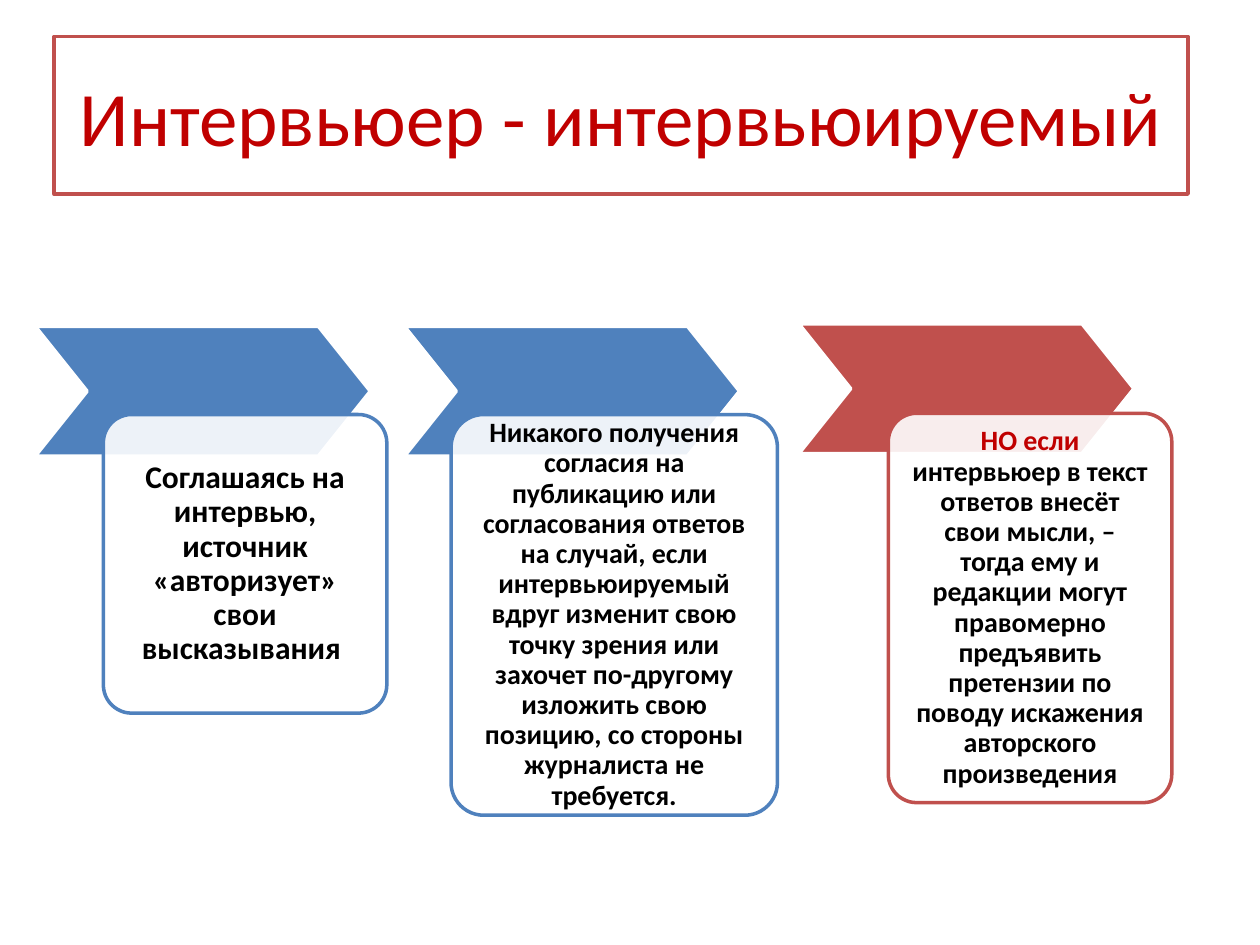
from dataclasses import dataclass

from lxml import etree
from pptx import Presentation, util as u
from pptx.dml.color import RGBColor
from pptx.enum import shapes, text
from pptx.oxml.ns import qn

PX = u.Inches(1) // 100


@dataclass(frozen=True)
class Theme:
    font: str = "Calibri"
    white: str = "FFFFFF"
    black: str = "000000"
    blue: str = "4F81BD"
    red: str = "C0504D"
    dark: str = "C00000"
    title: int = 44
    large: int = 18
    small: int = 16
    line: int = 2
    alpha: int = 90


T = Theme()
KIND = shapes.MSO_SHAPE


def shape(slide, kind, box, fill, line, adj=None):
    item = slide.shapes.add_shape(kind, *(n * PX for n in box))
    item.shadow.inherit = False
    item.fill.solid()
    item.fill.fore_color.rgb = RGBColor.from_string(fill)
    item.line.color.rgb = RGBColor.from_string(line)
    item.line.width = u.Pt(T.line)
    if adj is not None:
        item.adjustments[0] = adj
    return item


def fade(item):
    color = item.fill._xPr.find(qn("a:solidFill"))[0]
    etree.SubElement(color, qn("a:alpha")).set("val", str(T.alpha * 1000))


def write(item, parts, size, bold=False):
    frame = item.text_frame
    frame.word_wrap = True
    frame.vertical_anchor = text.MSO_ANCHOR.MIDDLE
    para = frame.paragraphs[0]
    para.alignment = text.PP_ALIGN.CENTER
    for words, color in parts:
        run = para.add_run()
        run.text = words
        run.font.name = T.font
        run.font.size = u.Pt(size)
        run.font.bold = bold
        run.font.color.rgb = RGBColor.from_string(color)
    return frame


def header(slide, box, words):
    item = shape(slide, KIND.RECTANGLE, box, T.white, T.red)
    write(item, [(words, T.dark)], T.title)


def step(slide, box, card, color, parts, size, inset):
    left, top = box
    shape(slide, KIND.CHEVRON, (left, top, 266, 103), color, T.white, 0.4)
    right, down, width, height = card
    item = shape(slide, KIND.ROUNDED_RECTANGLE,
                 (left + right, top + down, width, height),
                 T.white, color, 0.1)
    fade(item)
    frame = write(item, parts, size, True)
    frame.margin_left = frame.margin_right = inset * PX
    frame.margin_top = frame.margin_bottom = inset * PX
    frame.paragraphs[0].line_spacing = 0.9


STEPS = [
    ((28, 259), (54, 70, 225, 237), T.blue,
     [("Соглашаясь на интервью, источник «авторизует» свои высказывания ",
       T.black)], T.large, 14),
    ((321, 259), (37, 70, 259, 318), T.blue,
     [("Никакого получения согласия на публикацию или согласования ответов "
       "на случай, если интервьюируемый вдруг изменит свою точку зрения или "
       "захочет по-другому изложить свою позицию, со стороны журналиста не "
       "требуется.", T.black)], T.small, 12),
    ((634, 257), (71, 71, 225, 309), T.red,
     [("НО если ", T.dark),
      ("интервьюер в текст ответов внесёт свои мысли, – тогда ему и редакции "
       "могут правомерно предъявить претензии по поводу искажения авторского "
       "произведения", T.black)], T.small, 12),
]


def main():
    deck = Presentation()
    deck.slide_width = 1000 * PX
    deck.slide_height = 750 * PX
    slide = deck.slides.add_slide(deck.slide_layouts[6])
    header(slide, (43, 29, 900, 125), "Интервьюер - интервьюируемый")
    for item in STEPS:
        step(slide, *item)
    deck.save("out.pptx")


if __name__ == "__main__":
    main()
